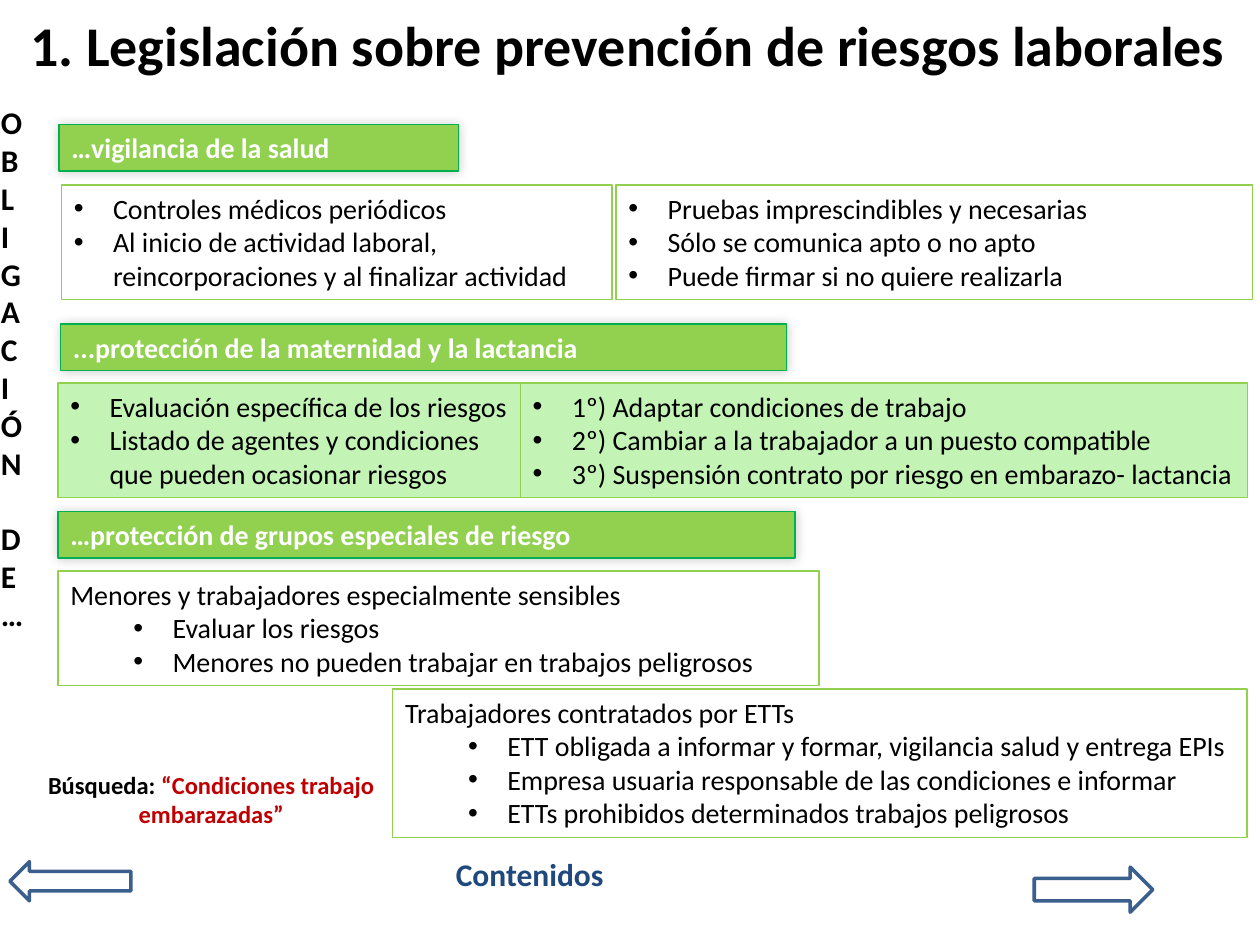
import pptx
import pptx.dml.color
import pptx.enum.shapes
import pptx.enum.text
import pptx.oxml
import pptx.oxml.ns
import pptx.util

Cm = pptx.util.Cm
SHAPES = pptx.enum.shapes.MSO_SHAPE
ANCHOR = pptx.enum.text.MSO_ANCHOR
ALIGN = pptx.enum.text.PP_ALIGN
FIT = pptx.enum.text.MSO_AUTO_SIZE
GREEN, DARK_GREEN, PALE_GREEN = "92D050", "00B050", "C3F4B6"


def color(value):
    """Turn a hex string into a colour."""
    return pptx.dml.color.RGBColor.from_string(value)


def add_span(para, text, size, ink, bold=False):
    """Add one formatted run to a paragraph."""
    span = para.add_run()
    span.text = text
    formats = {"name": "Calibri", "size": pptx.util.Pt(size), "bold": bold}
    for name, value in formats.items():
        setattr(span.font, name, value)
    span.font.color.rgb = color(ink)


def format_frame(box, formats):
    """Set text frame attributes of a box."""
    for name, value in {"word_wrap": True, **formats}.items():
        setattr(box.text_frame, name, value)


def add_label(page, place, spans, size, align=ALIGN.LEFT, **formats):
    """Add a bold text box from pairs of text and colour."""
    box = page.shapes.add_textbox(*map(Cm, place))
    format_frame(box, formats)
    para = box.text_frame.paragraphs[0]
    para.alignment = align
    for text, ink in spans:
        add_span(para, text, size, ink, True)
    return box


def add_outline(page, kind, place, line, width, fill=None):
    """Add a shadowless preset shape with a line and an optional fill."""
    box = page.shapes.add_shape(kind, *map(Cm, place))
    box.shadow.inherit = False
    if fill:
        box.fill.solid()
        box.fill.fore_color.rgb = color(fill)
    else:
        box.fill.background()
    box.line.color.rgb = color(line)
    box.line.width = pptx.util.Pt(width)
    return box


def add_shadow(box):
    """Give a shape a soft shadow."""
    effects = box.element.spPr.find(pptx.oxml.ns.qn("a:effectLst"))
    effects.append(pptx.oxml.parse_xml(
        f'<a:outerShdw {pptx.oxml.ns.nsdecls("a")} blurRad="76200" dist="0" dir="13500000">'
        '<a:srgbClr val="000000"><a:alpha val="20000"/></a:srgbClr></a:outerShdw>'))


def add_heading(page, place, text):
    """Add a green section heading."""
    box = add_outline(page, SHAPES.RECTANGLE, place, DARK_GREEN, 0.75, GREEN)
    add_shadow(box)
    format_frame(box, {"vertical_anchor": ANCHOR.TOP, "auto_size": FIT.SHAPE_TO_FIT_TEXT})
    para = box.text_frame.paragraphs[0]
    para.alignment = ALIGN.LEFT
    add_span(para, text, 16, "FFFFFF", True)


def add_bullet(para, margin):
    """Give a paragraph a hanging bullet."""
    properties = para._p.get_or_add_pPr()
    properties.set("marL", str(Cm(margin)))
    properties.set("indent", str(-Cm(0.79)))
    properties.append(pptx.oxml.parse_xml(
        f'<a:buFont {pptx.oxml.ns.nsdecls("a")} typeface="Arial"/>'))
    properties.append(pptx.oxml.parse_xml(
        f'<a:buChar {pptx.oxml.ns.nsdecls("a")} char="•"/>'))


def add_list(page, place, items, fill=None, lead=None):
    """Add a framed bullet list, indented below its lead line if it has one."""
    box = add_outline(page, SHAPES.RECTANGLE, place, GREEN, 0.75, fill)
    format_frame(box, {"vertical_anchor": ANCHOR.TOP, "auto_size": FIT.SHAPE_TO_FIT_TEXT})
    frame = box.text_frame
    lines = [lead, *items] if lead else items
    for index, text in enumerate(lines):
        para = frame.add_paragraph() if index else frame.paragraphs[0]
        para.alignment = ALIGN.LEFT
        if text != lead:
            para.level = 1 if lead else 0
            add_bullet(para, 2.06 if lead else 0.79)
        add_span(para, text, 16, "000000")


def add_arrow(page, kind, place):
    """Add a navigation arrow."""
    add_outline(page, kind, place, "3A5F8C", 2)


def main():
    """Build the slide and save it."""
    deck = pptx.Presentation()
    deck.slide_width, deck.slide_height = Cm(25.4), Cm(19.05)
    page = deck.slides.add_slide(deck.slide_layouts[6])

    add_label(page, (0.36, 0.08, 25.04, 1.6),
              [("1. Legislación sobre prevención de riesgos laborales", "000000")],
              32, vertical_anchor=ANCHOR.MIDDLE)
    add_label(page, (8.94, 17.12, 3.66, 1.02), [("Contenidos", "1F497D")], 18,
              auto_size=FIT.SHAPE_TO_FIT_TEXT)
    add_arrow(page, SHAPES.LEFT_ARROW, (0.2, 17.37, 2.44, 0.79))
    add_arrow(page, SHAPES.RIGHT_ARROW, (20.85, 17.48, 2.39, 0.91))

    add_heading(page, (1.19, 2.51, 8.05, 0.94), "…vigilancia de la salud")
    add_list(page, (1.24, 3.73, 11.1, 2.31), [
        "Controles médicos periódicos",
        "Al inicio de actividad laboral, reincorporaciones y al finalizar actividad"])
    add_list(page, (12.42, 3.73, 12.83, 2.31), [
        "Pruebas imprescindibles y necesarias",
        "Sólo se comunica apto o no apto",
        "Puede firmar si no quiere realizarla"])

    add_heading(page, (1.22, 6.53, 14.63, 0.94),
                "...protección de la maternidad y la lactancia")
    add_list(page, (1.17, 7.72, 9.63, 2.31), [
        "Evaluación específica de los riesgos",
        "Listado de agentes y condiciones que pueden ocasionar riesgos"], PALE_GREEN)
    add_list(page, (10.49, 7.72, 14.66, 2.31), [
        "1º) Adaptar condiciones de trabajo",
        "2º) Cambiar a la trabajador a un puesto compatible",
        "3º) Suspensión contrato por riesgo en embarazo- lactancia"], PALE_GREEN)

    add_heading(page, (1.17, 10.31, 14.86, 0.94),
                "…protección de grupos especiales de riesgo")
    add_list(page, (1.17, 11.51, 15.34, 2.31), [
        "Evaluar los riesgos",
        "Menores no pueden trabajar en trabajos peligrosos"],
        lead="Menores y trabajadores especialmente sensibles")
    add_list(page, (7.92, 13.89, 17.22, 3), [
        "ETT obligada a informar y formar, vigilancia salud y entrega EPIs",
        "Empresa usuaria responsable de las condiciones e informar",
        "ETTs prohibidos determinados trabajos peligrosos"],
        lead="Trabajadores contratados por ETTs")

    duty = add_label(page, (-0.23, 1.96, 1.42, 14.45), [("OBLIGACIÓN DE…", "000000")], 18,
                     auto_size=FIT.SHAPE_TO_FIT_TEXT)
    duty.element.txBody.bodyPr.set("vert", "wordArtVert")
    add_label(page, (0.41, 15.39, 7.7, 1.45),
              [("Búsqueda:", "000000"), (" “Condiciones trabajo embarazadas”", "C00000")],
              14, ALIGN.CENTER, auto_size=FIT.SHAPE_TO_FIT_TEXT)

    deck.save("out.pptx")


if __name__ == "__main__":
    main()
